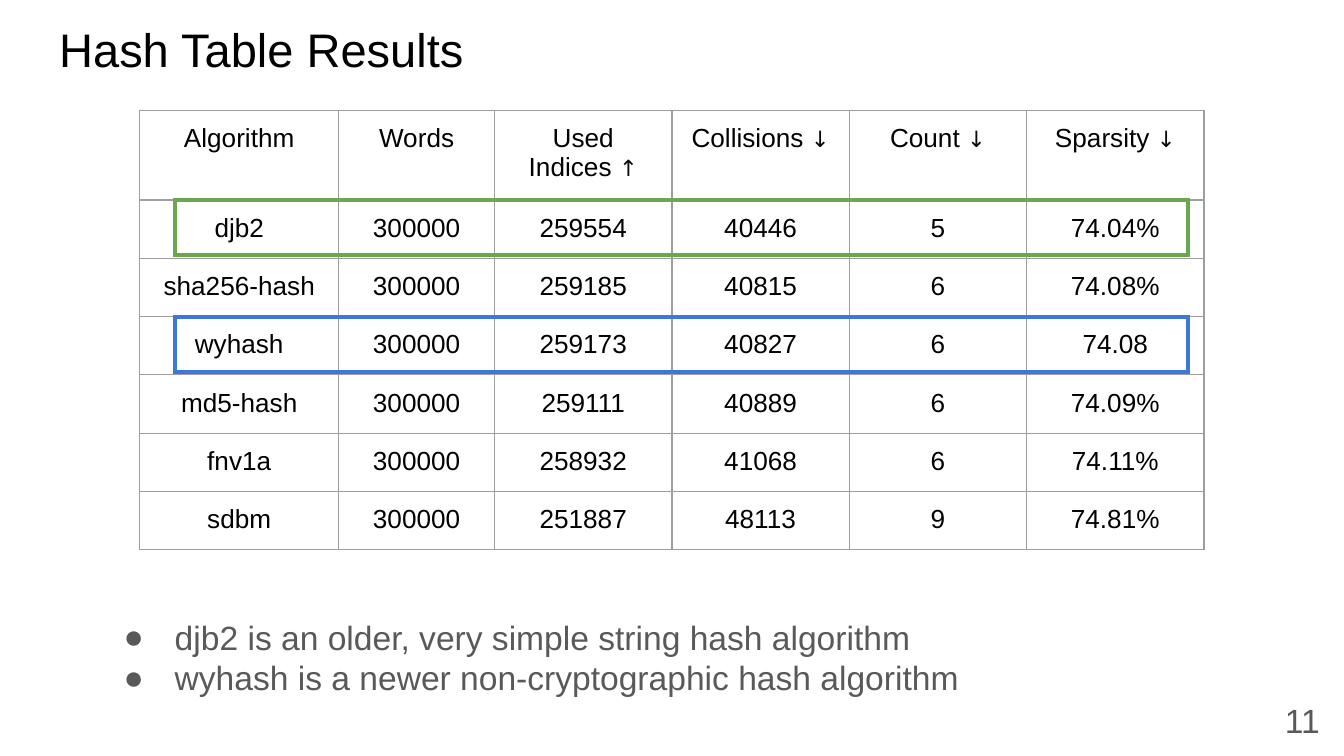
from dataclasses import dataclass

from lxml.etree import SubElement
from pptx import Presentation
from pptx.dml.color import RGBColor as Rgb
from pptx.enum.shapes import MSO_SHAPE as Shape
from pptx.enum.text import MSO_ANCHOR as Anchor, MSO_AUTO_SIZE as Fit, PP_ALIGN as Align
from pptx.oxml import parse_xml
from pptx.oxml.ns import nsdecls, qn
from pptx.util import Inches, Pt


@dataclass(frozen=True)
class Theme:
    font: str = "Arial"
    arrow_font: str = "Roboto"
    ink: str = "000000"
    arrow: str = "0A0A0A"
    gray: str = "595959"
    grid: str = "9E9E9E"
    green: str = "6AA84F"
    blue: str = "3C78D8"
    title: float = 25.2
    body: float = 18
    cell: float = 14
    small: float = 12
    pad: float = 0.1


def place(shape, box):
    shape.left, shape.top, shape.width, shape.height = map(Inches, box)


class Page:
    def __init__(self, slide, theme):
        self.slide, self.theme = slide, theme

    def style(self, font, size, color, name=None):
        font.name = name or self.theme.font
        font.size = Pt(size)
        font.color.rgb = Rgb.from_string(color)

    def pad(self, frame):
        frame.margin_left = frame.margin_right = Inches(self.theme.pad)
        frame.margin_top = frame.margin_bottom = Inches(self.theme.pad)

    def frame(self, shape, box, fit):
        place(shape, box)
        frame = shape.text_frame
        frame.word_wrap = True
        frame.auto_size = fit
        frame.vertical_anchor = Anchor.TOP
        self.pad(frame)
        return frame

    def title(self, text, box):
        frame = self.frame(self.slide.shapes.title, box, Fit.NONE)
        frame.text = text
        para = frame.paragraphs[0]
        para.alignment = Align.LEFT
        self.style(para.font, self.theme.title, self.theme.ink)

    def bullets(self, items, box):
        frame = self.frame(self.slide.placeholders[1], box, Fit.SHAPE_TO_FIT_TEXT)
        frame.text = "\n".join(items)
        for para in frame.paragraphs:
            props = para._p.get_or_add_pPr()
            props.set("marL", str(Inches(0.5)))
            props.set("indent", str(Inches(-0.38)))
            tint = SubElement(props, qn("a:buClr"))
            SubElement(tint, qn("a:srgbClr"), val=self.theme.gray)
            SubElement(props, qn("a:buFont"), typeface=self.theme.font)
            SubElement(props, qn("a:buChar"), char="●")
            para.space_before = Pt(0)
            self.style(para.font, self.theme.body, self.theme.gray)

    def number(self, text, box):
        shape = self.slide.shapes.add_textbox(*map(Inches, box))
        frame = self.frame(shape, box, Fit.SHAPE_TO_FIT_TEXT)
        frame.text = text
        para = frame.paragraphs[0]
        para.alignment = Align.CENTER
        self.style(para.font, self.theme.body, self.theme.gray)

    def border(self, cell):
        props = cell._tc.get_or_add_tcPr()
        for spot, side in enumerate("LRTB"):
            props.insert(spot, parse_xml(
                f'<a:ln{side} {nsdecls("a")} w="{Pt(0.75)}"><a:solidFill>'
                f'<a:srgbClr val="{self.theme.grid}"/></a:solidFill></a:ln{side}>'))

    def fill(self, cell, text):
        """Write a cell; an arrow at the end of the text gets its own font."""
        self.pad(cell)
        cell.fill.background()
        self.border(cell)
        para = cell.text_frame.paragraphs[0]
        para.alignment = Align.CENTER
        words = text.rstrip("↑↓")
        run = para.add_run()
        run.text = words
        self.style(run.font, self.theme.cell, self.theme.ink)
        if words != text:
            run = para.add_run()
            run.text = text[len(words):]
            self.style(run.font, self.theme.small, self.theme.arrow, self.theme.arrow_font)

    def table(self, rows, left, top, widths, heights):
        box = left, top, sum(widths), sum(heights)
        table = self.slide.shapes.add_table(
            len(rows), len(widths), *map(Inches, box)).table
        table.first_row = table.horz_banding = False
        for col, width in zip(table.columns, widths):
            col.width = Inches(width)
        for row, height, texts in zip(table.rows, heights, rows):
            row.height = Inches(height)
            for cell, text in zip(row.cells, texts):
                self.fill(cell, text)

    def outline(self, box, color):
        shape = self.slide.shapes.add_shape(Shape.RECTANGLE, *map(Inches, box))
        shape.shadow.inherit = False
        shape.fill.background()
        shape.line.color.rgb = Rgb.from_string(color)
        shape.line.width = Pt(2.25)
        SubElement(shape.line._get_or_add_ln(), qn("a:miter"), lim="800000")


HEAD = ["Algorithm", "Words", "Used Indices ↑", "Collisions ↓", "Count ↓", "Sparsity ↓"]
RESULTS = [
    ["djb2", "300000", "259554", "40446", "5", "74.04%"],
    ["sha256-hash", "300000", "259185", "40815", "6", "74.08%"],
    ["wyhash", "300000", "259173", "40827", "6", "74.08"],
    ["md5-hash", "300000", "259111", "40889", "6", "74.09%"],
    ["fnv1a", "300000", "258932", "41068", "6", "74.11%"],
    ["sdbm", "300000", "251887", "48113", "9", "74.81%"],
]


def main():
    deck = Presentation()
    deck.slide_width = Inches(10)
    deck.slide_height = deck.slide_width * 9 // 16
    theme = Theme()
    page = Page(deck.slides.add_slide(deck.slide_layouts[1]), theme)
    page.title("Hash Table Results", (0.34, 0.05, 9.32, 0.63))
    page.number("11", (9.42, 5.11, 0.54, 0.5))
    page.table([HEAD] + RESULTS, 1.04, 0.82,
               [1.48, 1.16] + [1.32] * 4, [0.66] + [0.43] * len(RESULTS))
    for top, color in ((1.49, theme.green), (2.36, theme.blue)):
        page.outline((1.3, top, 7.54, 0.41), color)
    page.bullets(["djb2 is an older, very simple string hash algorithm",
                  "wyhash is a newer non-cryptographic hash algorithm"],
                 (0.7, 4.49, 9.33, 0.81))
    deck.save("out.pptx")


if __name__ == "__main__":
    main()
